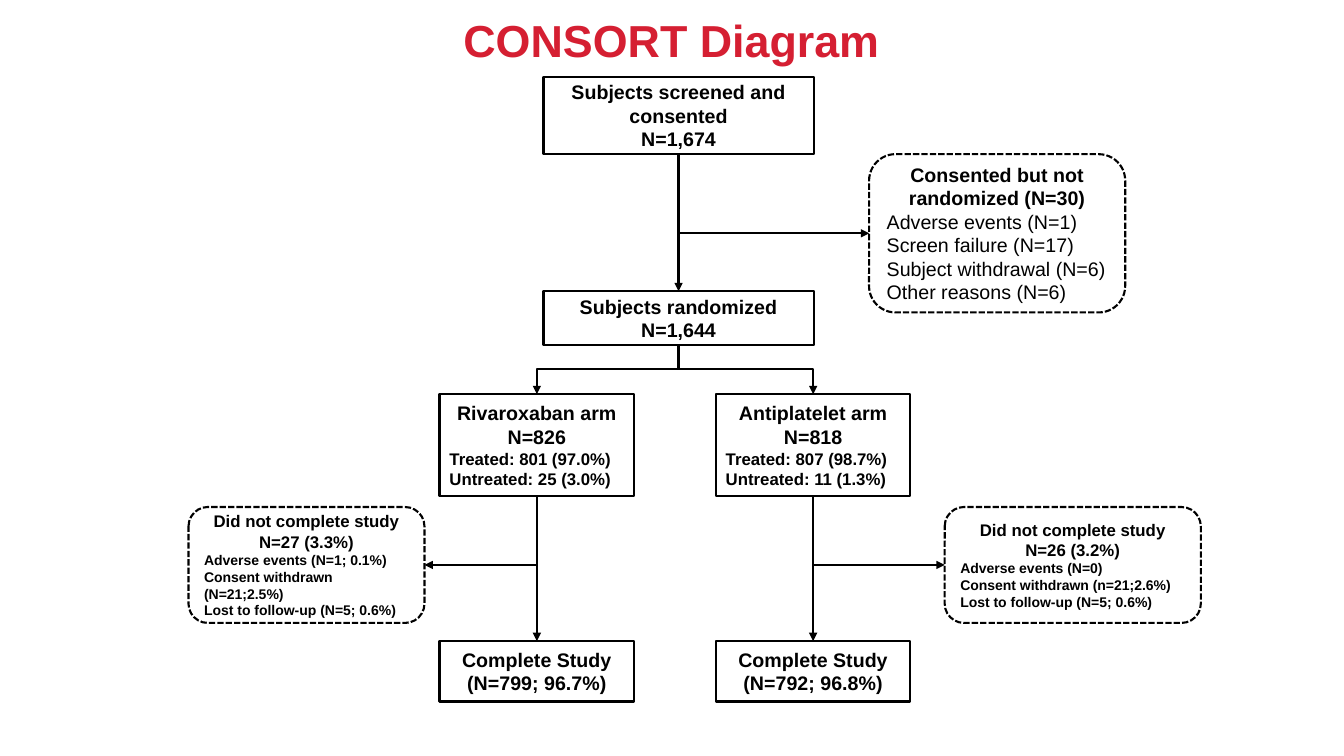
"""Build a CONSORT flow diagram slide with two study arms."""
from dataclasses import dataclass

import pptx
import pptx.dml.color
import pptx.enum.dml
import pptx.enum.shapes
import pptx.enum.text
import pptx.oxml
import pptx.oxml.ns
import pptx.util

Inches = pptx.util.Inches
Align = pptx.enum.text.PP_ALIGN
COLORS = {"title": "D51F32", "ink": "000000", "paper": "FFFFFF"}
TOP, LEFT, BOTTOM, RIGHT = range(4)
ARM_LEFTS = {"rivaroxaban": 4.36, "antiplatelet": 7.1}
ARM_WIDTH = 1.93


@dataclass(frozen=True)
class Box:
    key: str
    left: float
    top: float
    width: float
    height: float
    headings: list[str]
    details: list[str]
    heading_size: int = 14
    detail_size: int = 14
    detail_bold: bool = True
    dashed: bool = False


@dataclass(frozen=True)
class Arrow:
    start: str
    start_side: int
    end: str
    end_side: int
    preset: str = "line"


def arm_boxes(arm: str, title: str, total: str, treated: list[str], complete: str) -> list[Box]:
    left = ARM_LEFTS[arm]
    return [
        Box(arm, left, 3.91, ARM_WIDTH, 1.01, [title, total], treated, detail_size=12),
        Box(f"{arm} complete", left, 6.36, ARM_WIDTH, 0.6, ["Complete Study", complete], []),
    ]


def dropout_box(arm: str, left: float, width: float, total: str, reasons: list[str]) -> Box:
    return Box(f"{arm} dropout", left, 5.03, width, 1.15, ["Did not complete study", total],
               reasons, heading_size=12, detail_size=10, dashed=True)


BOXES = [
    Box("screened", 5.39, 0.76, 2.68, 0.77, ["Subjects screened and consented", "N=1,674"], []),
    Box("randomized", 5.39, 2.89, 2.68, 0.53, ["Subjects randomized", "N=1,644"], []),
    *arm_boxes("rivaroxaban", "Rivaroxaban arm", "N=826",
               ["Treated: 801 (97.0%)", "Untreated: 25 (3.0%)"], "(N=799; 96.7%)"),
    *arm_boxes("antiplatelet", "Antiplatelet arm", "N=818",
               ["Treated: 807 (98.7%)", "Untreated: 11 (1.3%)"], "(N=792; 96.8%)"),
    Box("excluded", 8.62, 1.53, 2.54, 1.57, ["Consented but not randomized (N=30)"],
        ["Adverse events (N=1)", "Screen failure (N=17)",
         "Subject withdrawal (N=6)", "Other reasons (N=6)"],
        detail_bold=False, dashed=True),
    dropout_box("rivaroxaban", 1.87, 2.34, "N=27 (3.3%)",
                ["Adverse events (N=1; 0.1%)", "Consent withdrawn (N=21;2.5%)",
                 "Lost to follow-up (N=5; 0.6%)"]),
    dropout_box("antiplatelet", 9.37, 2.54, "N=26 (3.2%)",
                ["Adverse events (N=0)", "Consent withdrawn (n=21;2.6%)",
                 "Lost to follow-up (N=5; 0.6%)"]),
]

ARROWS = [
    Arrow("screened", BOTTOM, "randomized", TOP),
    *[Arrow(arm, BOTTOM, f"{arm} complete", TOP) for arm in ARM_LEFTS],
    *[Arrow("randomized", BOTTOM, arm, TOP, "bentConnector3") for arm in ARM_LEFTS],
    Arrow("screened", BOTTOM, "excluded", LEFT, "bentConnector2"),
    Arrow("rivaroxaban", BOTTOM, "rivaroxaban dropout", RIGHT, "bentConnector2"),
    Arrow("antiplatelet", BOTTOM, "antiplatelet dropout", LEFT, "bentConnector2"),
]


def rgb(name: str) -> pptx.dml.color.RGBColor:
    return pptx.dml.color.RGBColor.from_string(COLORS[name])


def write_line(frame, text: str, *, size: int, color: str = "ink", bold: bool = True,
               align=Align.CENTER) -> None:
    para = frame.paragraphs[0]
    if para.runs:
        para = frame.add_paragraph()
    para.alignment = align
    span = para.add_run()
    span.text = text
    span.font.name = "Arial"
    span.font.size = pptx.util.Pt(size)
    span.font.bold = bold
    span.font.color.rgb = rgb(color)


def style_line(line) -> None:
    line.color.rgb = rgb("ink")
    line.width = pptx.util.Pt(1.5)


def draw_box(page, box: Box):
    kinds = pptx.enum.shapes.MSO_SHAPE
    shape = page.shapes.add_shape(
        kinds.ROUNDED_RECTANGLE if box.dashed else kinds.RECTANGLE,
        Inches(box.left), Inches(box.top), Inches(box.width), Inches(box.height))
    shape.shadow.inherit = False
    shape.fill.solid()
    shape.fill.fore_color.rgb = rgb("paper")
    style_line(shape.line)
    if box.dashed:
        shape.line.dash_style = pptx.enum.dml.MSO_LINE.SQUARE_DOT
    frame = shape.text_frame
    frame.word_wrap = True
    frame.vertical_anchor = pptx.enum.text.MSO_ANCHOR.MIDDLE
    for text in box.headings:
        write_line(frame, text, size=box.heading_size)
    for text in box.details:
        write_line(frame, text, size=box.detail_size, bold=box.detail_bold, align=Align.LEFT)
    return shape


def bend_downward(connector, preset: str) -> None:
    start_x, end_x = connector.begin_x, connector.end_x
    start_y, end_y = connector.begin_y, connector.end_y
    across, down = abs(end_x - start_x), abs(end_y - start_y)
    connector.left = (start_x + end_x - down) // 2
    connector.top = (start_y + end_y - across) // 2
    connector.width, connector.height = down, across
    properties = connector._element.spPr
    transform = properties.find(pptx.oxml.ns.qn("a:xfrm"))
    rightward = end_x > start_x
    transform.set("rot", str((270 if rightward else 90) * 60000))
    transform.set("flipH", "1" if rightward else "0")
    properties.find(pptx.oxml.ns.qn("a:prstGeom")).set("prst", preset)


def draw_arrow(page, arrow: Arrow, shapes: dict) -> None:
    kinds = pptx.enum.shapes.MSO_CONNECTOR
    kind = kinds.STRAIGHT if arrow.preset == "line" else kinds.ELBOW
    start, end = shapes[arrow.start], shapes[arrow.end]
    connector = page.shapes.add_connector(
        kind, start.left + start.width // 2, start.top, end.left + end.width // 2, end.top)
    connector.begin_connect(start, arrow.start_side)
    connector.end_connect(end, arrow.end_side)
    if kind == kinds.ELBOW:
        bend_downward(connector, arrow.preset)
    style_line(connector.line)
    namespace = pptx.oxml.ns.nsdecls("a")
    properties = connector._element.spPr
    outline = properties.find(pptx.oxml.ns.qn("a:ln"))
    outline.append(pptx.oxml.parse_xml(f'<a:tailEnd {namespace} type="triangle"/>'))
    properties.append(pptx.oxml.parse_xml(f"<a:effectLst {namespace}/>"))


def main() -> None:
    deck = pptx.Presentation()
    deck.slide_width, deck.slide_height = Inches(13.33), Inches(7.5)
    page = deck.slides.add_slide(deck.slide_layouts[6])
    shapes = {box.key: draw_box(page, box) for box in BOXES}
    for arrow in ARROWS:
        draw_arrow(page, arrow, shapes)
    title = page.shapes.add_textbox(Inches(1.07), Inches(0.08), Inches(11.18), Inches(0.64))
    title.text_frame.word_wrap = True
    write_line(title.text_frame, "CONSORT Diagram", size=32, color="title")
    deck.save("out.pptx")


if __name__ == "__main__":
    main()
